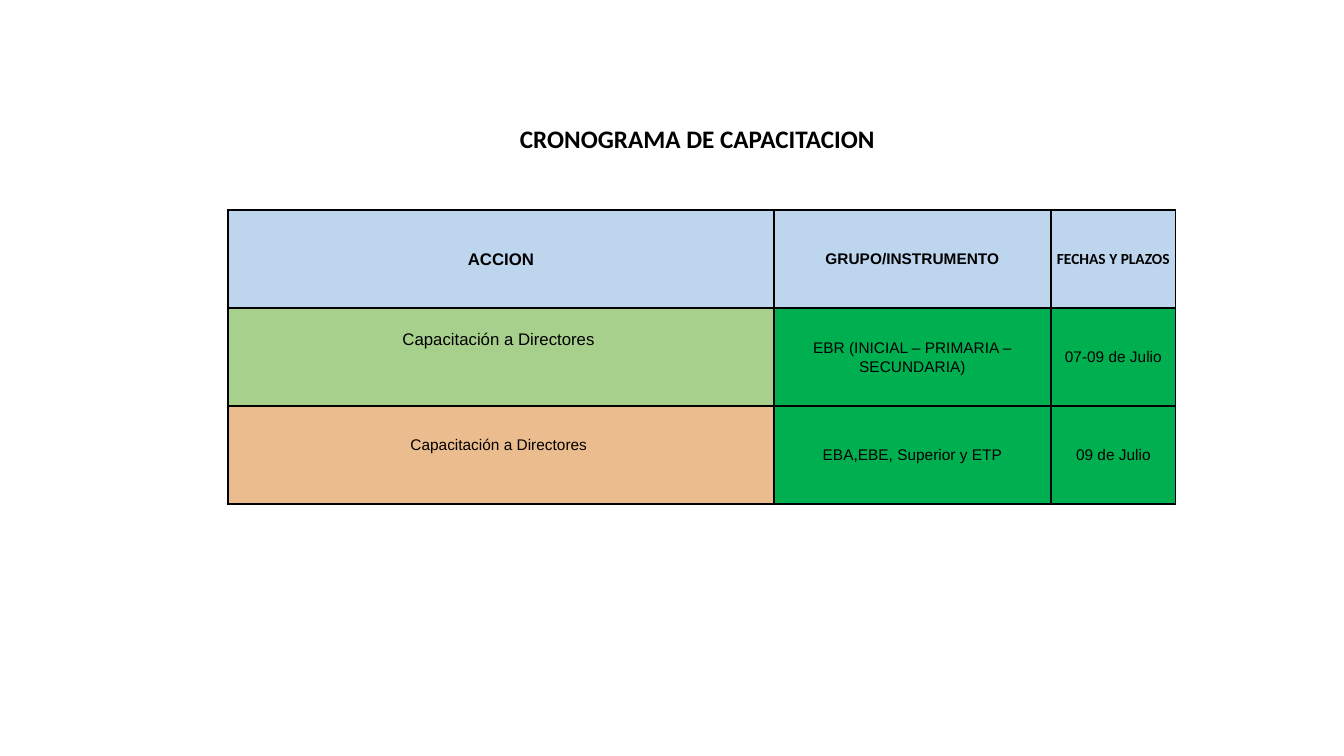
from lxml.etree import SubElement
from pptx import Presentation
from pptx.dml.color import RGBColor
from pptx.enum.text import MSO_ANCHOR, MSO_AUTO_SIZE, PP_ALIGN
from pptx.oxml.ns import qn
from pptx.util import Pt

PX = 9071.43  # EMU per px, at 100.8 px to the inch

BLACK, BLUE, LIGHT_GREEN, GREEN, ORANGE = "000000", "BDD6EE", "A8D08D", "00B050", "EBBC8D"
COLUMN_WIDTHS = [546, 277, 125]
ROW_HEIGHT = 98

# Each cell: text, fill, format, and optional room below the text
SCHEDULE = [
    [("ACCION", BLUE, dict(size=12, bold=True), 0),
     ("GRUPO/INSTRUMENTO", BLUE, dict(bold=True), 0),
     ("FECHAS Y PLAZOS", BLUE, dict(font="Calibri", bold=True), 0)],
    [("Capacitación a Directores ", LIGHT_GREEN, dict(size=12), 36),
     ("EBR (INICIAL – PRIMARIA – SECUNDARIA)", GREEN, {}, 0),
     ("07-09 de Julio", GREEN, {}, 0)],
    [("Capacitación a Directores ", ORANGE, {}, 20),
     ("EBA,EBE, Superior y ETP", GREEN, {}, 0),
     ("09 de Julio", GREEN, {}, 0)],
]


def px(length):
    return round(length * PX)


def color(value):
    return RGBColor.from_string(value)


def write(frame, text, size=11, font="Arial", bold=False, align=PP_ALIGN.CENTER, spacing=1.07):
    paragraph = frame.paragraphs[0]
    paragraph.alignment = align
    paragraph.line_spacing = spacing
    run = paragraph.add_run()
    run.text = text
    run.font.size = Pt(size)
    run.font.name = font
    run.font.bold = bold
    run.font.color.rgb = color(BLACK)


def add_borders(cell):
    properties = cell._tc.get_or_add_tcPr()
    for side in ("lnL", "lnR", "lnT", "lnB"):
        line = SubElement(properties, qn(f"a:{side}"), w=str(Pt(1)))
        fill = SubElement(line, qn("a:solidFill"))
        SubElement(fill, qn("a:srgbClr"), val=BLACK)


def add_title(slide, left, top, width, height):
    box = slide.shapes.add_textbox(px(left), px(top), px(width), px(height))
    frame = box.text_frame
    frame.word_wrap = False
    frame.auto_size = MSO_AUTO_SIZE.SHAPE_TO_FIT_TEXT
    write(frame, "CRONOGRAMA DE CAPACITACION", size=18, font="Calibri", bold=True,
          align=PP_ALIGN.LEFT, spacing=1.0)


def add_schedule(slide, left, top):
    rows, columns = len(SCHEDULE), len(COLUMN_WIDTHS)
    shape = slide.shapes.add_table(rows, columns, px(left), px(top),
                                   px(sum(COLUMN_WIDTHS)), px(rows * ROW_HEIGHT))
    table = shape.table
    for column, width in zip(table.columns, COLUMN_WIDTHS):
        column.width = px(width)
    for row, contents in zip(table.rows, SCHEDULE):
        row.height = px(ROW_HEIGHT)
        for cell, (text, fill, text_format, room_below) in zip(row.cells, contents):
            add_borders(cell)
            cell.fill.solid()
            cell.fill.fore_color.rgb = color(fill)
            cell.vertical_anchor = MSO_ANCHOR.MIDDLE
            cell.margin_left = cell.margin_right = px(5)
            cell.margin_top, cell.margin_bottom = 0, px(room_below)
            write(cell.text_frame, text, **text_format)


def main():
    presentation = Presentation()
    presentation.slide_width, presentation.slide_height = px(1344), px(756)
    slide = presentation.slides.add_slide(presentation.slide_layouts[6])
    add_schedule(slide, 228, 210)
    add_title(slide, 510, 118, 378, 40)
    presentation.save("out.pptx")


if __name__ == "__main__":
    main()
